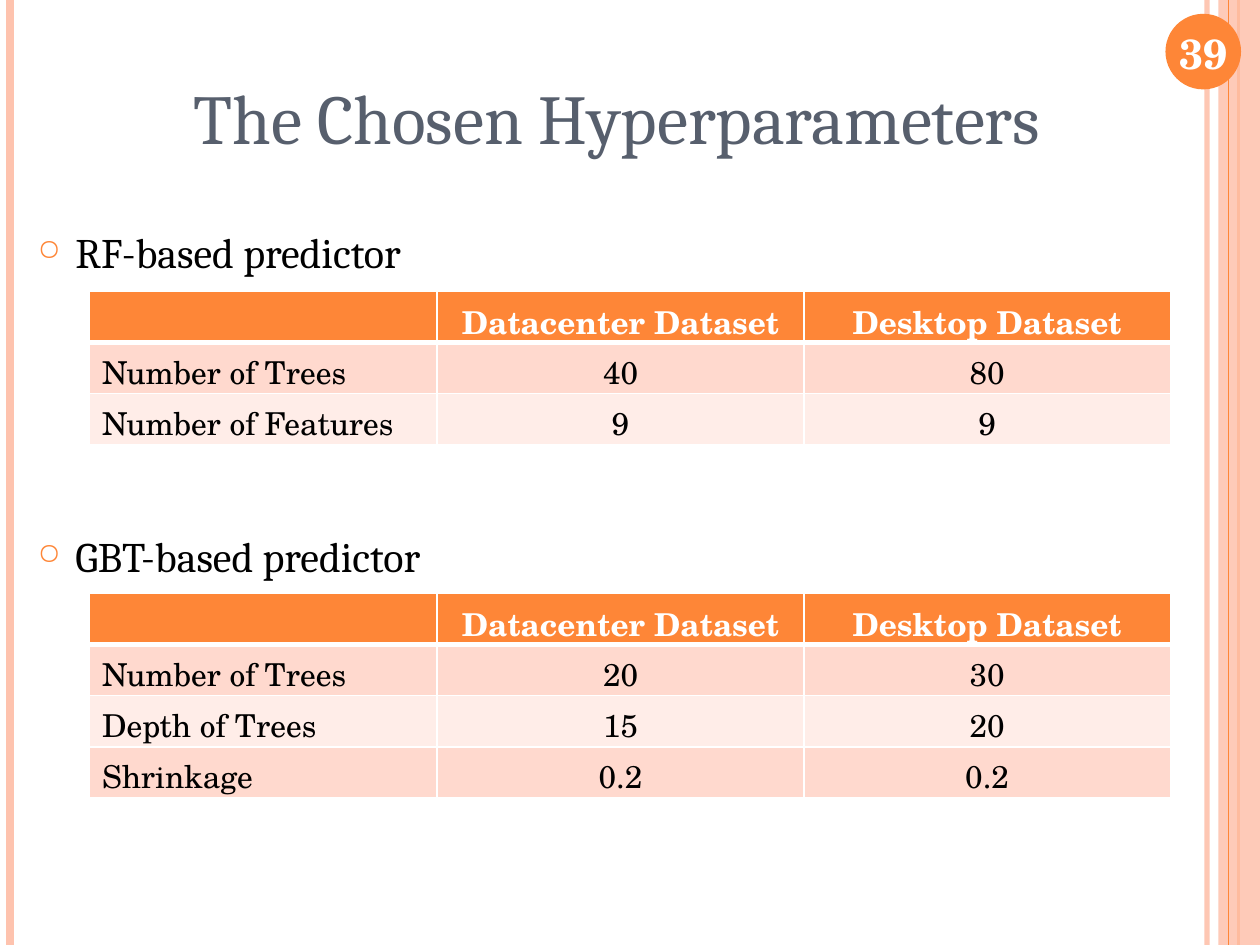
"""Build a slide with two tables of chosen hyperparameters."""
from lxml.etree import SubElement
from pptx import Presentation
from pptx.dml.color import RGBColor
from pptx.enum.shapes import MSO_CONNECTOR, MSO_SHAPE
from pptx.enum.text import MSO_ANCHOR, PP_ALIGN
from pptx.oxml.ns import qn
from pptx.util import Inches, Pt

COLORS = {
    "accent": "FE8637", "pale": "FEC3AE", "title": "575F6D", "ink": "000000",
    "white": "FFFFFF", "odd": "FFD9CE", "even": "FFEDE8",
}
SERIF, SCHOOL = "Cambria", "TeX Gyre Schola"
UNIT = Inches(0.1)
COLS, ROWS = 100, 75


def color(name):
    return RGBColor.from_string(COLORS[name])


def fade(part, alpha):
    fill = part.find(".//" + qn("a:srgbClr"))
    SubElement(fill, qn("a:alpha"), val=str(alpha * 1000))


class Deck:
    def __init__(self):
        self.show = Presentation()
        self.show.slide_width = COLS * UNIT
        self.show.slide_height = ROWS * UNIT
        self.slide = self.show.slides.add_slide(self.show.slide_layouts[6])
        self.shapes = self.slide.shapes

    def place(self, *cells):
        return [round(cell * UNIT) for cell in cells]

    def style(self, para, size, font, tone, bold=False, align=PP_ALIGN.LEFT):
        para.alignment = align
        for run in para.runs:
            run.font.size, run.font.name, run.font.bold = Pt(size), font, bold
            run.font.color.rgb = color(tone)

    def rule(self, col, tone, width, alpha=100):
        line = self.shapes.add_connector(
            MSO_CONNECTOR.STRAIGHT, *self.place(col, 0, col, ROWS))
        line.line.color.rgb = color(tone)
        line.line.width = Pt(width)
        props = line._element.spPr
        if alpha < 100:
            fade(props, alpha)
        SubElement(props, qn("a:effectLst"))

    def shape(self, kind, area, tone, alpha=100):
        form = self.shapes.add_shape(kind, *self.place(*area))
        form.shadow.inherit = False
        form.fill.solid()
        form.fill.fore_color.rgb = color(tone)
        form.line.fill.background()
        if alpha < 100:
            fade(form._element.spPr, alpha)

    def frame(self, area, text, anchor):
        frame = self.shapes.add_textbox(*self.place(*area)).text_frame
        frame.word_wrap = True
        frame.vertical_anchor = anchor
        frame.text = text
        return frame

    def label(self, area, text, *look):
        frame = self.frame(area, text, MSO_ANCHOR.MIDDLE)
        self.style(frame.paragraphs[0], *look, align=PP_ALIGN.CENTER)

    def bullets(self, area, items, gaps):
        frame = self.frame(area, "\n".join(items), MSO_ANCHOR.TOP)
        for para, gap in zip(frame.paragraphs, gaps):
            self.style(para, 24, SERIF, "ink")
            para.space_before = Pt(gap)
            props = para._p.get_or_add_pPr()
            props.set("marL", str(Inches(0.3)))
            props.set("indent", str(-Inches(0.3)))
            tint = SubElement(props, qn("a:buClr"))
            SubElement(tint, qn("a:srgbClr"), val=COLORS["accent"])
            SubElement(props, qn("a:buSzPct"), val="70000")
            SubElement(props, qn("a:buChar"), char="○")

    def border(self, cell, widths):
        props = cell._tc.get_or_add_tcPr()
        for side, width in zip("LRTB", widths):
            line = SubElement(props, qn("a:ln" + side), w=str(Pt(width)))
            fill = SubElement(line, qn("a:solidFill"))
            SubElement(fill, qn("a:srgbClr"), val=COLORS["white"])

    def table(self, left, top, widths, height, rows):
        area = self.place(left, top, sum(widths), height * len(rows))
        grid = self.shapes.add_table(len(rows), len(widths), *area).table
        for col, width in zip(grid.columns, self.place(*widths)):
            col.width = width
        for r, row in enumerate(rows):
            grid.rows[r].height = round(height * UNIT)
            head = r == 0
            tone = "accent" if head else "odd" if r % 2 else "even"
            for c, text in enumerate(row):
                cell = grid.cell(r, c)
                cell.text_frame.text = text
                self.style(cell.text_frame.paragraphs[0], 18, SCHOOL,
                           "white" if head else "ink", head,
                           PP_ALIGN.CENTER if c else PP_ALIGN.LEFT)
                self.border(cell, (1, 1, 3 if r == 1 else 1, 3 if head else 1))
                cell.fill.solid()
                cell.fill.fore_color.rgb = color(tone)

    def save(self):
        self.show.save("out.pptx")


def main():
    deck = Deck()
    deck.rule(95.8, "pale", 3, 93)
    deck.rule(0.8, "pale", 4.5)
    deck.rule(98.3, "accent", 1.5)
    deck.shape(MSO_SHAPE.RECTANGLE, (96.7, 0, 3.3, ROWS), "pale", 87)
    deck.rule(97.5, "accent", 0.75)
    deck.shape(MSO_SHAPE.OVAL, (92.5, 1.1, 6, 6), "accent")
    deck.bullets((2, 17.5, 93.7, 29.4),
                 ["RF-based predictor", "GBT-based predictor"], (6, 145))
    deck.label((2, 3, 93.9, 12.5), "The Chosen Hyperparameters",
               40, SERIF, "title")
    deck.label((92.2, 1.3, 6.7, 5.7), "39", 24, SCHOOL, "white", True)

    head = ("", "Datacenter Dataset", "Desktop Dataset")
    forest = [("Number of Trees", "40", "80"), ("Number of Features", "9", "9")]
    boost = [("Number of Trees", "20", "30"), ("Depth of Trees", "15", "20"),
             ("Shrinkage", "0.2", "0.2")]
    for top, body in ((23.1, forest), (47.1, boost)):
        deck.table(7.1, top, (27.6, 29.1, 29.1), 4.06, [head, *body])
    deck.save()


if __name__ == "__main__":
    main()
